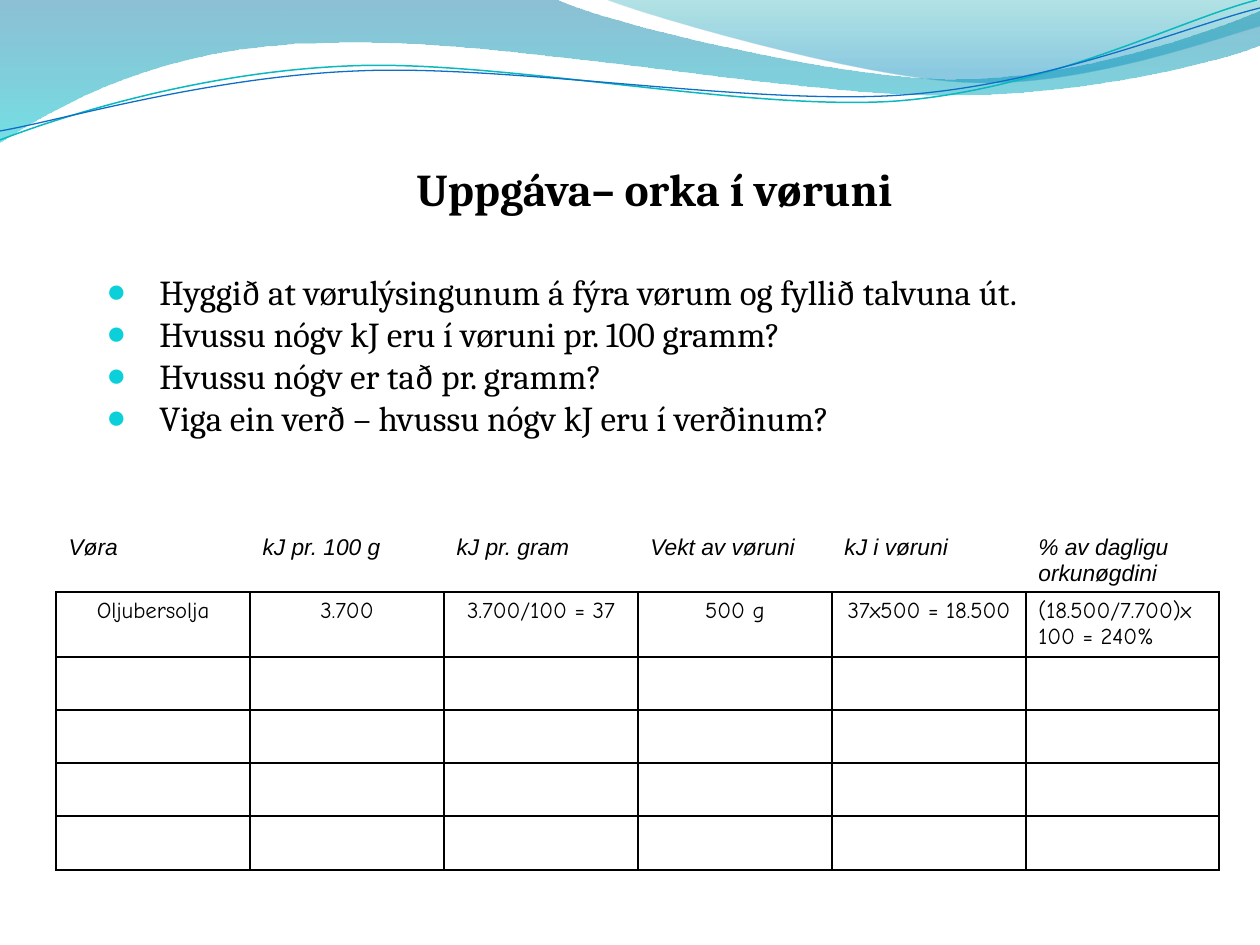
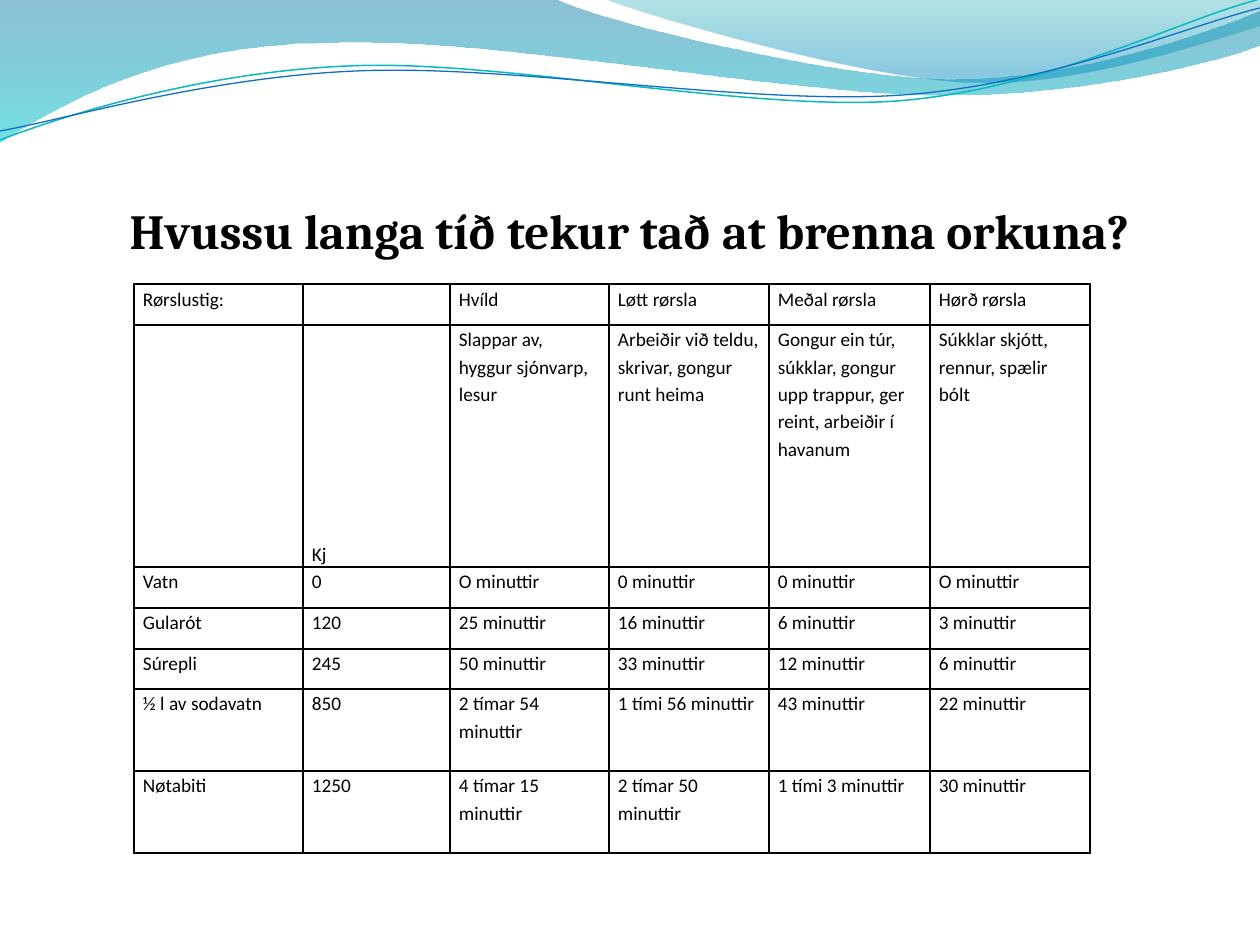
"""Build two slides on food energy under a shared wave header."""
import dataclasses

import lxml.etree
import pptx
import pptx.dml.color
import pptx.enum.text
import pptx.oxml.ns
import pptx.util

PX = 914400 / 126
ALIGN = pptx.enum.text.PP_ALIGN
ANCHOR = pptx.enum.text.MSO_ANCHOR


@dataclasses.dataclass(frozen=True)
class Theme:
    ink: str = "000000"
    bullet: str = "0BD0D9"
    back_wave: tuple = ((0, "0074A1", 45), (1, "00C6CF", 55))
    front_wave: tuple = ((0, "00A1A9", 30), (0.8, "008BBF", 45))
    teal_line: tuple = ("0AB8BF", 0.85)
    blue_line: tuple = ("0F6FC6", 0.75)
    serif: str = "Cambria"
    header: str = "Arial"
    entry: str = "Comic Neue"
    grid: str = "Calibri"
    title: int = 26
    big_title: int = 28
    body: int = 20
    cell: int = 13
    small: int = 11
    border: int = 1


BACK_WAVE = [
    (0, 0), (557, 0), (600, 21, 837, 79, 955, 79),
    (1075, 79, 1207, 33, 1260, 11), (1260, 45),
    (1239, 55, 1096, 96, 940, 95), (784, 95, 481, 35, 324, 43),
    (163, 45, 58, 105, 0, 142),
]
FRONT_WAVE = [
    (607, 0), (641, 14, 859, 78, 969, 82),
    (1079, 87, 1211, 40, 1260, 26), (1260, 0),
]
TEAL_LINE = [
    (0, 140), (60, 117, 199, 72, 349, 66),
    (498, 59, 747, 112, 898, 101), (1049, 89, 1182, 19, 1257, 0),
]
BLUE_LINE = [
    (0, 131), (59, 121, 207, 77, 357, 71),
    (508, 64, 752, 106, 903, 95), (1053, 84, 1187, 26, 1260, 8),
]

TASKS = [
    "Hyggið at vørulýsingunum á fýra vørum og fyllið talvuna út.",
    "Hvussu nógv kJ eru í vøruni pr. 100 gramm?",
    "Hvussu nógv er tað pr. gramm?",
    "Viga ein verð – hvussu nógv kJ eru í verðinum?",
]
ENERGY_ROWS = [
    ["Vøra", "kJ pr. 100 g", "kJ pr. gram", "Vekt av vøruni", "kJ i vøruni",
     "% av dagligu orkunøgdini"],
    ["Oljubersolja", "3.700", "3.700/100 = 37", "500 g", "37x500 = 18.500",
     "(18.500/7.700)x 100 = 240%"],
] + [[""] * 6] * 4
BURN_ROWS = [
    ["Rørslustig:", "", "Hvíld", "Løtt rørsla", "Meðal rørsla", "Hørð rørsla"],
    ["", "Kj", "Slappar av, hyggur sjónvarp, lesur",
     "Arbeiðir við teldu, skrivar, gongur runt heima",
     "Gongur ein túr, súkklar, gongur upp trappur, ger reint, arbeiðir í havanum",
     "Súkklar skjótt, rennur, spælir bólt"],
    ["Vatn", "0", "O minuttir", "0 minuttir", "0 minuttir", "O minuttir"],
    ["Gularót", "120", "25 minuttir", "16 minuttir", "6 minuttir", "3 minuttir"],
    ["Súrepli", "245", "50 minuttir", "33 minuttir", "12 minuttir", "6 minuttir"],
    ["½ l av sodavatn", "850", "2 tímar 54 minuttir", "1 tími 56 minuttir",
     "43 minuttir", "22 minuttir"],
    ["Nøtabiti", "1250", "4 tímar 15 minuttir", "2 tímar 50 minuttir",
     "1 tími 3 minuttir", "30 minuttir"],
]


def px(n):
    return pptx.util.Emu(round(n * PX))


def rgb(value):
    return pptx.dml.color.RGBColor.from_string(value)


def qn(tag):
    return pptx.oxml.ns.qn(tag)


def sub(parent, tag, **attrs):
    return lxml.etree.SubElement(parent, qn(tag), attrs)


class Deck:
    def __init__(self, theme):
        self.theme = theme
        self.prs = pptx.Presentation()
        self.prs.slide_width, self.prs.slide_height = px(1260), px(945)

    def slide(self):
        self.s = self.prs.slides.add_slide(self.prs.slide_layouts[6])
        self.wave(BACK_WAVE, self.theme.back_wave)
        self.wave(FRONT_WAVE, self.theme.front_wave)
        self.curve(TEAL_LINE, *self.theme.teal_line)
        self.curve(BLUE_LINE, *self.theme.blue_line)

    def outline(self, segments, close):
        start, *rest = segments
        points = [(px(seg[i]), px(seg[i + 1]))
                  for seg in rest for i in range(0, len(seg), 2)]
        fb = self.s.shapes.build_freeform(px(start[0]), px(start[1]), scale=1.0)
        fb.add_line_segments(points, close=close)
        sp = fb.convert_to_shape()
        sp.shadow.inherit = False
        self.bend(sp, rest)
        return sp

    def bend(self, sp, segments):
        lines = iter(list(sp._element.spPr.iter(qn("a:lnTo"))))
        for seg in segments:
            ln = next(lines)
            if len(seg) == 6:
                bez = lxml.etree.Element(qn("a:cubicBezTo"))
                ln.addprevious(bez)
                for old in (ln, next(lines), next(lines)):
                    bez.append(old[0])
                    old.getparent().remove(old)

    def wave(self, segments, stops):
        sp = self.outline(segments, True)
        sp.line.fill.background()
        sp.fill.gradient()
        sp.fill.gradient_angle = 270
        for stop, (position, color, _) in zip(sp.fill.gradient_stops, stops):
            stop.position = position
            stop.color.rgb = rgb(color)
        colors = sp._element.spPr.iter(qn("a:srgbClr"))
        for clr, (_, _, opacity) in zip(colors, stops):
            sub(clr, "a:alpha", val=str(opacity * 1000))

    def curve(self, segments, color, width):
        sp = self.outline(segments, False)
        sp.fill.background()
        sp.line.color.rgb = rgb(color)
        sp.line.width = pptx.util.Pt(width)

    def style(self, p, font, size, bold=False, italic=False):
        p.font.name, p.font.size = font, pptx.util.Pt(size)
        p.font.bold, p.font.italic = bold, italic
        p.font.color.rgb = rgb(self.theme.ink)

    def text(self, x, y, w, h, title, size, bullets=()):
        tf = self.s.shapes.add_textbox(px(x), px(y), px(w), px(h)).text_frame
        tf.word_wrap = True
        p = tf.paragraphs[0]
        p.text, p.alignment = title, ALIGN.CENTER
        self.style(p, self.theme.serif, size, bold=True)
        if bullets:
            p.space_after = pptx.util.Pt(31)
        for item in bullets:
            p = tf.add_paragraph()
            p.text = item
            self.bullet(p)
            self.style(p, self.theme.serif, self.theme.body)

    def bullet(self, p):
        pPr = p._p.get_or_add_pPr()
        pPr.set("marL", str(px(53)))
        pPr.set("indent", str(px(-53)))
        sub(sub(pPr, "a:buClr"), "a:srgbClr", val=self.theme.bullet)
        sub(pPr, "a:buSzPct", val="95000")
        sub(pPr, "a:buFont", typeface=self.theme.header)
        sub(pPr, "a:buChar", char="●")

    def borders(self, cell, drawn):
        tcPr = cell._tc.get_or_add_tcPr()
        for side in "LRTB":
            ln = sub(tcPr, f"a:ln{side}", w=str(pptx.util.Pt(self.theme.border)))
            if side in drawn:
                sub(sub(ln, "a:solidFill"), "a:srgbClr", val=self.theme.ink)
            else:
                sub(ln, "a:noFill")
        cell.fill.background()

    def table(self, x, y, widths, heights, rows, dress):
        frame = self.s.shapes.add_table(len(rows), len(widths), px(x), px(y),
                                        px(sum(widths)), px(sum(heights)))
        table = frame.table
        table.first_row = table.horz_banding = False
        for col, w in zip(table.columns, widths):
            col.width = px(w)
        for row, h in zip(table.rows, heights):
            row.height = px(h)
        for r, texts in enumerate(rows):
            for c, text in enumerate(texts):
                cell = table.cell(r, c)
                cell.text = text
                dress(cell, r, c)

    def energy_cell(self, cell, r, c):
        p = cell.text_frame.paragraphs[0]
        cell.margin_bottom = 0
        if r == 0:
            self.style(p, self.theme.header, self.theme.cell, italic=True)
        else:
            self.style(p, self.theme.entry, self.theme.cell)
            p.alignment = ALIGN.LEFT if c == 5 else ALIGN.CENTER
        self.borders(cell, "B" if r == 0 else "LRTB")

    def burn_cell(self, cell, r, c):
        p = cell.text_frame.paragraphs[0]
        p.line_spacing = 1.15
        self.style(p, self.theme.grid, self.theme.small)
        cell.margin_left = cell.margin_right = px(9)
        cell.margin_top = cell.margin_bottom = 0
        if (r, c) == (1, 1):
            cell.vertical_anchor = ANCHOR.BOTTOM
        self.borders(cell, "LRTB")


def main():
    theme = Theme()
    deck = Deck(theme)

    deck.slide()
    deck.text(94, 155, 1121, 624, "Uppgáva– orka í vøruni", theme.title, TASKS)
    deck.table(56, 529, [194] * 5 + [193], [63, 65] + [53] * 3 + [54],
               ENERGY_ROWS, deck.energy_cell)

    deck.slide()
    deck.text(94, 194, 1071, 118, "Hvussu langa tíð tekur tað at brenna orkuna?",
              theme.big_title)
    deck.table(134, 284, [169, 147, 159, 160, 161, 160],
               [41, 242, 41, 41, 40, 82, 82], BURN_ROWS, deck.burn_cell)

    deck.prs.save("out.pptx")


if __name__ == "__main__":
    main()
